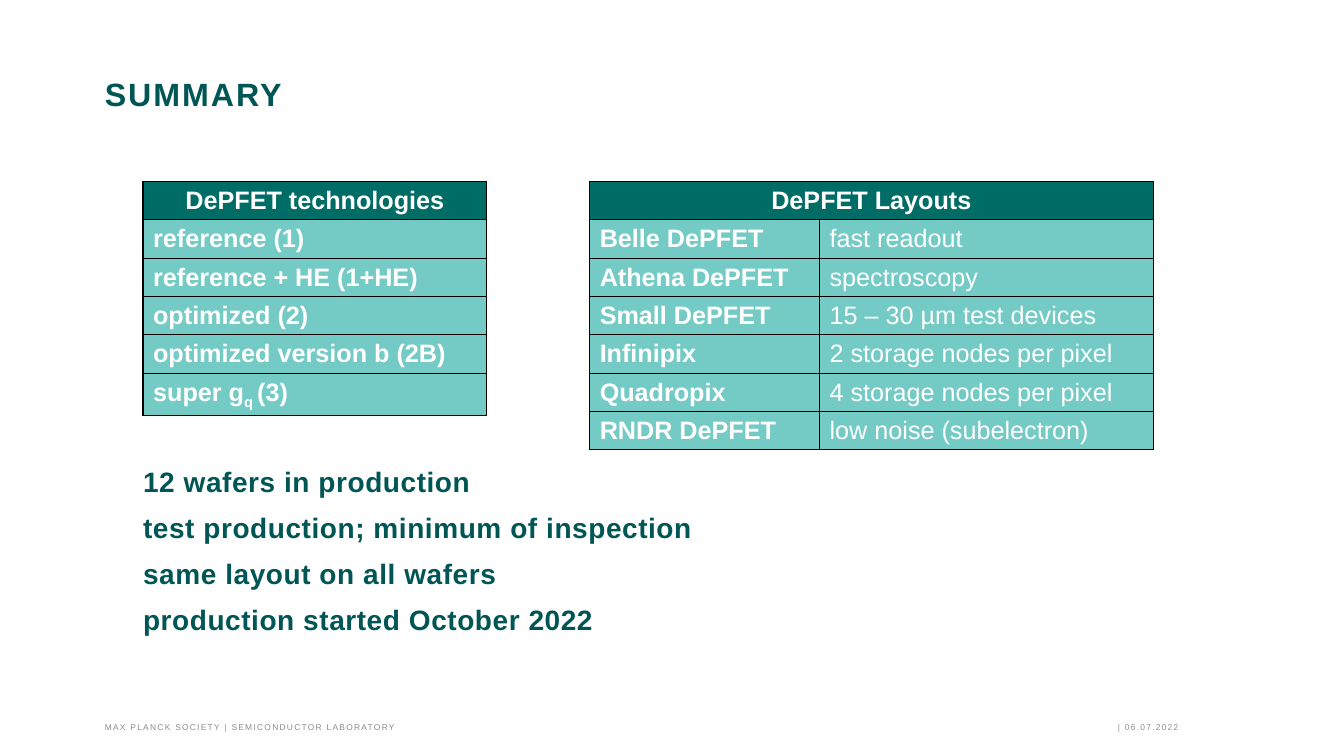
from dataclasses import dataclass

from lxml import etree
from pptx import Presentation
from pptx.dml.color import RGBColor
from pptx.enum.text import MSO_ANCHOR, MSO_AUTO_SIZE, PP_ALIGN
from pptx.oxml.ns import qn
from pptx.util import Pt

TOP, BOTTOM = MSO_ANCHOR.TOP, MSO_ANCHOR.BOTTOM
LEFT, CENTER = PP_ALIGN.LEFT, PP_ALIGN.CENTER
NO_AUTOFIT = MSO_AUTO_SIZE.NONE
TITLE_ONLY = 5


@dataclass(frozen=True)
class Theme:
    font: str = "Arial"
    heading: str = "005555"
    header_fill: str = "006C66"
    body_fill: str = "74CAC5"
    table_text: str = "FFFFFF"
    border: str = "000000"
    footer: str = "8C8C8C"
    title_size: float = 23
    body_size: float = 20
    table_size: float = 18
    footer_size: float = 6


THEME = Theme()

TECHNOLOGIES = [
    ["DePFET technologies"],
    ["reference (1)"],
    ["reference + HE (1+HE)"],
    ["optimized (2)"],
    ["optimized version b (2B)"],
    [("super g", "q ", "(3)")],
]
LAYOUTS = [
    ["DePFET Layouts", ""],
    ["Belle DePFET", "fast readout"],
    ["Athena DePFET", "spectroscopy"],
    ["Small DePFET", "15 – 30 µm test devices"],
    ["Infinipix", "2 storage nodes per pixel"],
    ["Quadropix", "4 storage nodes per pixel"],
    ["RNDR DePFET", "low noise (subelectron)"],
]
PRODUCTION_NOTES = [
    "12 wafers in production",
    "test production; minimum of inspection",
    "same layout on all wafers",
    "production started October 2022",
]


def add_run(paragraph, text, size, color, bold=False, spacing=0, baseline=0):
    """Spacing is in points, baseline in percent of the type size."""
    run = paragraph.add_run()
    run.text = text
    run.font.name = THEME.font
    run.font.size = Pt(size)
    run.font.bold = bold
    run.font.color.rgb = RGBColor.from_string(color)
    properties = run.font._element
    if spacing:
        properties.set("spc", str(round(spacing * 100)))
    if baseline:
        properties.set("baseline", str(baseline * 1000))


def prepare_frame(shape, anchor, wrap=True):
    frame = shape.text_frame
    frame.auto_size = NO_AUTOFIT
    frame.word_wrap = wrap
    frame.vertical_anchor = anchor
    frame.margin_left = frame.margin_top = 0
    frame.margin_right = frame.margin_bottom = 0
    return frame


def set_title(slide, text):
    title = slide.shapes.title
    title.left, title.top = Pt(74.9), Pt(54.7)
    title.width, title.height = Pt(810.7), Pt(75.6)
    paragraph = prepare_frame(title, TOP).paragraphs[0]
    paragraph.alignment = LEFT
    paragraph.line_spacing = Pt(26)
    paragraph.space_after = Pt(18)
    add_run(paragraph, text, THEME.title_size, THEME.heading, True, 1.4)


def add_notes_text(slide, lines):
    box = slide.shapes.add_textbox(Pt(102.2), Pt(332.6), Pt(409), Pt(162.7))
    frame = prepare_frame(box, TOP)
    for index, line in enumerate(lines):
        paragraph = frame.add_paragraph() if index else frame.paragraphs[0]
        paragraph.line_spacing = Pt(23)
        paragraph.space_before = Pt(10 if index else 0)
        add_run(paragraph, line, THEME.body_size, THEME.heading, True, 0.4)


def add_footer_text(slide, text, left, width, wrap=True):
    box = slide.shapes.add_textbox(Pt(left), Pt(508.3), Pt(width), Pt(14.4))
    paragraph = prepare_frame(box, BOTTOM, wrap).paragraphs[0]
    add_run(paragraph, text, THEME.footer_size, THEME.footer, spacing=0.9)


def add_borders(cell):
    properties = cell._tc.get_or_add_tcPr()
    for side in ("lnL", "lnR", "lnT", "lnB"):
        line = etree.SubElement(properties, qn(f"a:{side}"), w=str(Pt(1)))
        fill = etree.SubElement(line, qn("a:solidFill"))
        etree.SubElement(fill, qn("a:srgbClr"), val=THEME.border)


def fill_cell(cell, content, is_header, bold):
    """A tuple as content holds normal, subscript and normal text."""
    add_borders(cell)
    cell.fill.solid()
    color = THEME.header_fill if is_header else THEME.body_fill
    cell.fill.fore_color.rgb = RGBColor.from_string(color)
    paragraph = cell.text_frame.paragraphs[0]
    paragraph.alignment = CENTER if is_header else LEFT
    parts = content if isinstance(content, tuple) else (content,)
    for index, part in enumerate(parts):
        if part:
            add_run(paragraph, part, THEME.table_size, THEME.table_text, bold,
                    baseline=-25 if index == 1 else 0)


def add_summary_table(slide, rows, left, column_widths):
    row_height = Pt(24.5)
    table = slide.shapes.add_table(
        len(rows), len(column_widths), Pt(left), Pt(129.6),
        Pt(sum(column_widths)), row_height * len(rows)).table
    for column, width in zip(table.columns, column_widths):
        column.width = Pt(width)
    for row_index, row in enumerate(rows):
        table.rows[row_index].height = row_height
        for column_index, content in enumerate(row):
            fill_cell(table.cell(row_index, column_index), content,
                      row_index == 0, row_index == 0 or column_index == 0)
    if len(column_widths) > 1:
        table.cell(0, 0).merge(table.cell(0, len(column_widths) - 1))


def main():
    presentation = Presentation()
    presentation.slide_width, presentation.slide_height = Pt(960), Pt(540)
    slide = presentation.slides.add_slide(
        presentation.slide_layouts[TITLE_ONLY])
    add_footer_text(slide, "MAX PLANCK SOCIETY | SEMICONDUCTOR LABORATORY",
                    74.9, 211, wrap=False)
    add_footer_text(slide, "|", 798.5, 3.6)
    add_footer_text(slide, "06.07.2022", 803.5, 43.9)
    set_title(slide, "SUMMARY")
    add_summary_table(slide, LAYOUTS, 421.2, [164.2, 238.3])
    add_summary_table(slide, TECHNOLOGIES, 102.2, [245.5])
    add_notes_text(slide, PRODUCTION_NOTES)
    presentation.save("out.pptx")


if __name__ == "__main__":
    main()
